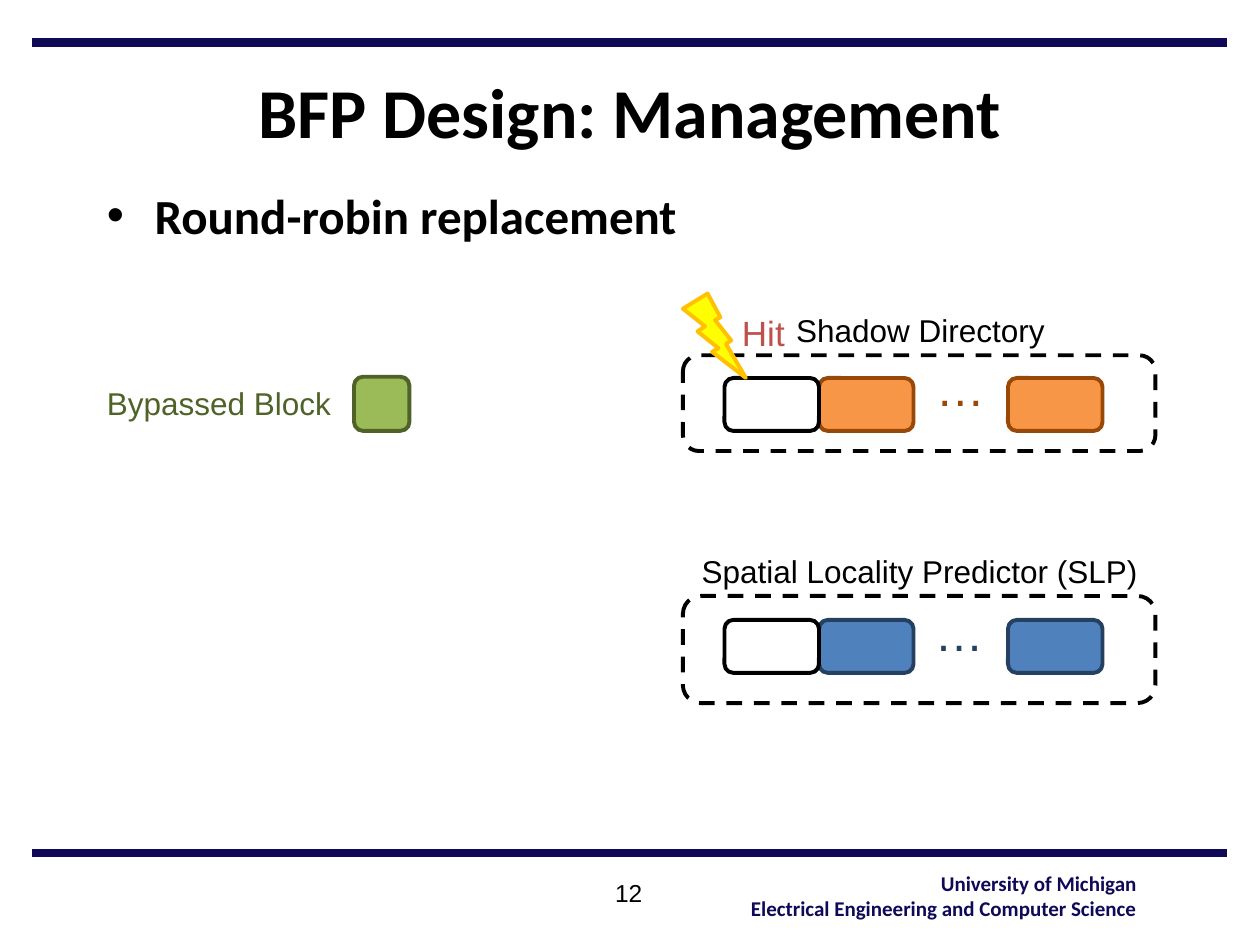
from lxml import etree
from pptx import Presentation
from pptx.dml.color import RGBColor
from pptx.enum.dml import MSO_LINE
from pptx.enum.shapes import MSO_CONNECTOR, MSO_SHAPE
from pptx.enum.text import MSO_ANCHOR, MSO_AUTO_SIZE, PP_ALIGN
from pptx.oxml.ns import qn
from pptx.util import Inches, Pt

BLACK = "000000"
NAVY = "0F0958"


def color(hex_code):
    return RGBColor.from_string(hex_code)


def add_rule(slide, y):
    rule = slide.shapes.add_connector(
        MSO_CONNECTOR.STRAIGHT, Inches(0.25), Inches(y), Inches(9.74), Inches(y))
    rule.line.color.rgb = color(NAVY)
    rule.line.width = Pt(5)
    etree.SubElement(rule._element.spPr, qn("a:effectLst"))


def add_text(slide, box, lines, size, ink=BLACK, font="Arial", bold=False,
             align=PP_ALIGN.LEFT, wrap=False, anchor=MSO_ANCHOR.TOP, bullet=False):
    frame = slide.shapes.add_textbox(*map(Inches, box)).text_frame
    frame.word_wrap = wrap
    frame.auto_size = MSO_AUTO_SIZE.NONE if wrap else MSO_AUTO_SIZE.SHAPE_TO_FIT_TEXT
    frame.vertical_anchor = anchor
    frame.text = "\n".join(lines)
    for paragraph in frame.paragraphs:
        if bullet:
            add_bullet(paragraph)
        paragraph.alignment = align
        paragraph.font.name = font
        paragraph.font.size = Pt(size)
        paragraph.font.bold = bold
        paragraph.font.color.rgb = color(ink)


def add_bullet(paragraph):
    properties = paragraph._p.get_or_add_pPr()
    properties.set("marL", str(Inches(0.38)))
    properties.set("indent", str(Inches(-0.38)))
    etree.SubElement(properties, qn("a:buFont"), typeface="Arial")
    etree.SubElement(properties, qn("a:buChar"), char="•")


def add_block(slide, box, outline, fill=None, kind=MSO_SHAPE.ROUNDED_RECTANGLE,
              dashed=False):
    block = slide.shapes.add_shape(kind, *map(Inches, box))
    block.shadow.inherit = False
    if fill:
        block.fill.solid()
        block.fill.fore_color.rgb = color(fill)
    else:
        block.fill.background()
    block.line.color.rgb = color(outline)
    block.line.width = Pt(2.25)
    if dashed:
        block.line.dash_style = MSO_LINE.DASH


def add_table_diagram(slide, top, height, name, name_box, entry_top, dots_box,
                      fill, outline):
    add_block(slide, (5.42, top, 3.75, height), BLACK, dashed=True)
    add_text(slide, name_box, [name], 18)
    for left in (6.5, 8):
        add_block(slide, (left, entry_top, 0.75, 0.42), outline, fill)
    add_text(slide, dots_box, ["…"], 28, outline)
    add_block(slide, (5.75, entry_top, 0.75, 0.42), BLACK)


def main():
    deck = Presentation()
    deck.slide_width, deck.slide_height = Inches(10), Inches(7.5)
    slide = deck.slides.add_slide(deck.slide_layouts[6])

    for y in (0.34, 6.77):
        add_rule(slide, y)
    add_text(slide, (5.82, 6.86, 3.3, 0.5),
             ["University of Michigan", "Electrical Engineering and Computer Science"],
             12, NAVY, "Calibri", bold=True, align=PP_ALIGN.RIGHT)
    add_text(slide, (0.75, 0.42, 8.5, 0.91), ["BFP Design: Management"], 40,
             font="Calibri", bold=True, align=PP_ALIGN.CENTER, wrap=True,
             anchor=MSO_ANCHOR.MIDDLE)
    add_text(slide, (3.95, 6.92, 2.08, 0.5), ["12"], 14,
             align=PP_ALIGN.CENTER, wrap=True)
    add_text(slide, (0.75, 1.42, 8.5, 0.73), ["Round-robin replacement"], 28,
             font="Calibri", bold=True, wrap=True, bullet=True)

    add_table_diagram(slide, 2.82, 0.76, "Shadow Directory", (6.22, 2.42, 2.19, 0.4),
                      3, (7.33, 2.79, 0.59, 0.57), "F79646", "984807")
    add_table_diagram(slide, 4.73, 0.85, "Spatial Locality Predictor (SLP)",
                      (5.47, 4.33, 3.69, 0.4), 4.92, (7.32, 4.73, 0.59, 0.57),
                      "4F81BD", "254061")

    add_block(slide, (2.81, 2.99, 0.44, 0.43), "4F6228", "9BBB59")
    add_text(slide, (0.75, 3, 2, 0.4), ["Bypassed Block"], 18, "4F6228")
    add_block(slide, (5.42, 2.33, 0.5, 0.67), "FFC000", "FFFF00",
              MSO_SHAPE.LIGHTNING_BOLT)
    add_text(slide, (5.79, 2.42, 0.55, 0.44), ["Hit"], 20, "C0504D")

    deck.save("out.pptx")


if __name__ == "__main__":
    main()
